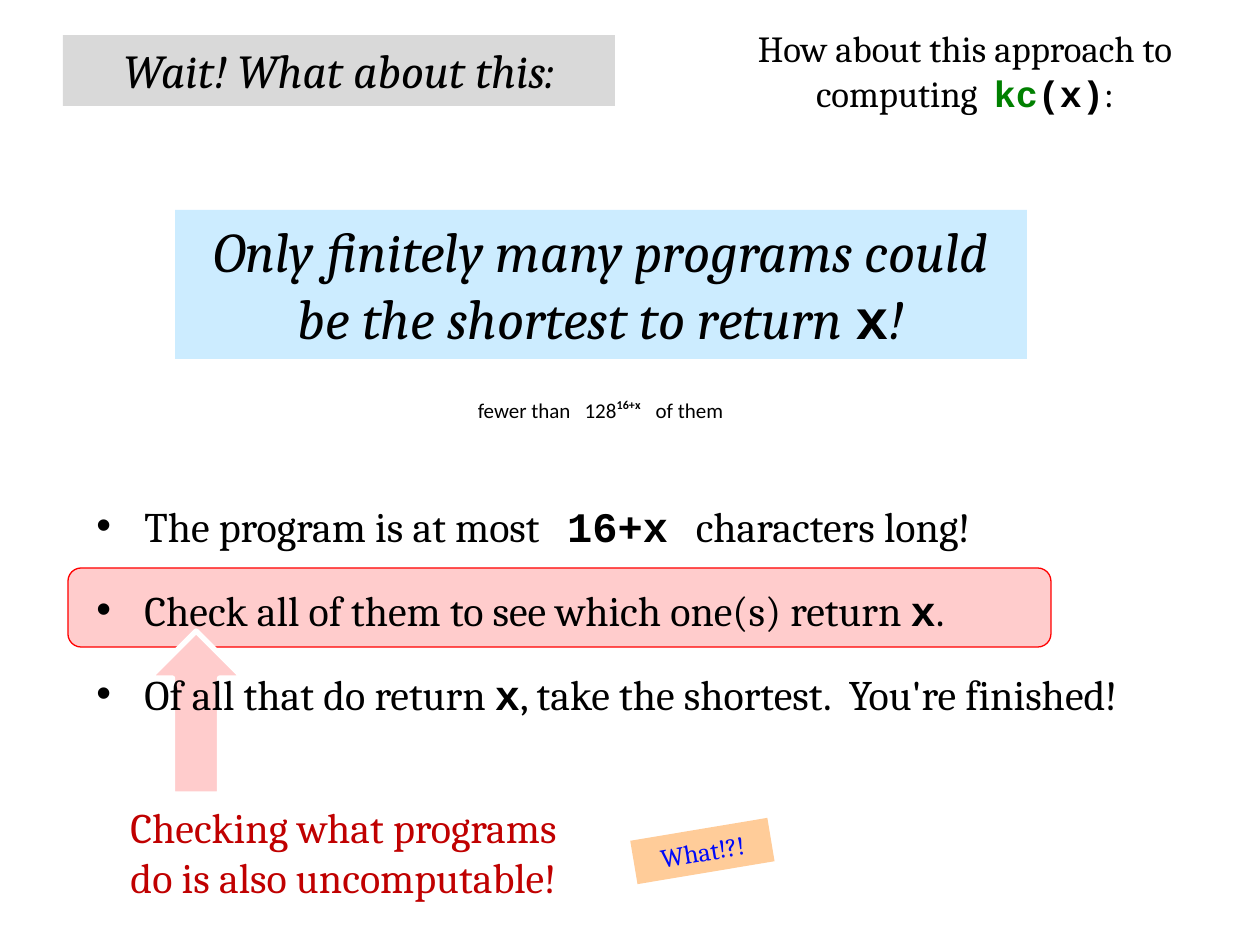
from dataclasses import dataclass

from lxml.etree import SubElement
from pptx import Presentation
from pptx.dml.color import RGBColor
from pptx.enum.shapes import MSO_SHAPE as Preset
from pptx.enum.text import MSO_ANCHOR as Anchor, MSO_AUTO_SIZE as AutoSize, PP_ALIGN as Align
from pptx.oxml.ns import qn
from pptx.util import Pt


@dataclass(frozen=True)
class Theme:
    black: str = "000000"
    white: str = "FFFFFF"
    gray: str = "D9D9D9"
    sky: str = "CCECFF"
    pink: str = "FFCCCC"
    orange: str = "FFCC99"
    red: str = "FF0000"
    dark_red: str = "C00000"
    green: str = "008000"
    blue: str = "000AF9"
    serif: str = "Cambria"
    sans: str = "Calibri"
    mono: str = "Courier New"
    statement: int = 32
    title: int = 27
    body: int = 24
    question: int = 21
    shout: int = 15
    note: int = 12


THEME = Theme()
EMU_PER_PX = 914400 / 126
SLIDE_SIZE = (1260, 945)

CODE = {"font": THEME.mono, "bold": True, "italic": False}
HIGHLIGHT_BOX = (68, 568, 983, 79)
ARROW_BOX = (149, 631, 94, 163)

SHOUT = {"box": (633, 829, 139, 44), "size": THEME.shout, "fill": THEME.orange,
         "color": THEME.blue, "rotation": 350.5, "runs": [("What!?!", {})]}
WARNING = {"box": (118, 795, 499, 115), "size": THEME.body, "color": THEME.dark_red,
           "align": Align.LEFT,
           "runs": [("Checking what programs do is also uncomputable!", {})]}
TITLE = {"box": (63, 35, 552, 71), "size": THEME.title, "fill": THEME.gray,
         "italic": True, "runs": [("Wait! What about this:", {})]}
QUESTION = {"box": (745, 20, 440, 102), "size": THEME.question,
            "runs": [("How about this approach to computing  ", {}),
                     ("kc", {**CODE, "color": THEME.green}),
                     ("(x)", CODE), (":", {})]}
STATEMENT = {"box": (175, 210, 852, 149), "size": THEME.statement, "fill": THEME.sky,
             "italic": True,
             "runs": [("Only finitely many programs could be the shortest to return ", {}),
                      ("x", CODE), ("!", {})]}
NOTE = {"box": (420, 391, 361, 38), "size": THEME.note, "font": THEME.sans,
        "runs": [("fewer than   128", {}),
                 ("16+x  ", {"bold": True, "baseline": 42000}),
                 ("  of them", {})]}

STEPS = [
    [("The program is at most   ", {}), ("16+x", CODE), ("   characters long!", {})],
    [("Check all of them to see which one(s) return ", {}), ("x", CODE), (".", {})],
    [("Of all that do return ", {}), ("x", CODE),
     (", take the shortest.  You're finished!", {})],
]
STEP_LEFT, STEP_TOP, STEP_PITCH = 84, 494, 84
STEP_WIDTH, STEP_HEIGHT, STEP_INDENT = 1100, 63, 48


def px(value):
    return round(value * EMU_PER_PX)


def rgb(color):
    return RGBColor.from_string(color)


def add_preset(slide, preset, box, fill, line=None, weight=1, rotation=0):
    shape = slide.shapes.add_shape(preset, *map(px, box))
    shape.shadow.inherit = False
    shape.rotation = rotation
    shape.fill.solid()
    shape.fill.fore_color.rgb = rgb(fill)
    if line:
        shape.line.color.rgb = rgb(line)
        shape.line.width = Pt(weight)
    else:
        shape.line.fill.background()
    return shape


def add_text(slide, box, runs, size, font=THEME.serif, color=THEME.black, italic=False,
             align=Align.CENTER, fill=None, rotation=0):
    if fill:
        shape = add_preset(slide, Preset.RECTANGLE, box, fill, rotation=rotation)
    else:
        shape = slide.shapes.add_textbox(*map(px, box))
    frame = shape.text_frame
    frame.word_wrap = True
    frame.auto_size = AutoSize.SHAPE_TO_FIT_TEXT
    frame.vertical_anchor = Anchor.TOP
    paragraph = frame.paragraphs[0]
    paragraph.alignment = align
    for text, style in runs:
        run = paragraph.add_run()
        run.text = text
        run.font.size = Pt(size)
        run.font.name = style.get("font", font)
        run.font.bold = style.get("bold", False)
        run.font.italic = style.get("italic", italic)
        run.font.color.rgb = rgb(style.get("color", color))
        if "baseline" in style:
            run.font._element.set("baseline", str(style["baseline"]))
    return paragraph


def add_bullet(paragraph, indent):
    properties = paragraph._p.get_or_add_pPr()
    properties.set("marL", str(px(indent)))
    properties.set("indent", str(-px(indent)))
    SubElement(properties, qn("a:buFont"), typeface="Arial")
    SubElement(properties, qn("a:buChar"), char="•")


def main():
    presentation = Presentation()
    presentation.slide_width, presentation.slide_height = map(px, SLIDE_SIZE)
    slide = presentation.slides.add_slide(presentation.slide_layouts[6])

    add_preset(slide, Preset.ROUNDED_RECTANGLE, HIGHLIGHT_BOX, THEME.pink, THEME.red, 0.75)
    add_text(slide, **SHOUT)
    add_preset(slide, Preset.DOWN_ARROW, ARROW_BOX, THEME.pink, THEME.white, 3, rotation=180)
    for block in (WARNING, TITLE, QUESTION, STATEMENT):
        add_text(slide, **block)
    for row, runs in enumerate(STEPS):
        box = (STEP_LEFT, STEP_TOP + row * STEP_PITCH, STEP_WIDTH, STEP_HEIGHT)
        paragraph = add_text(slide, box, runs, THEME.body, align=Align.LEFT)
        add_bullet(paragraph, STEP_INDENT)
    add_text(slide, **NOTE)

    presentation.save("out.pptx")


if __name__ == "__main__":
    main()
